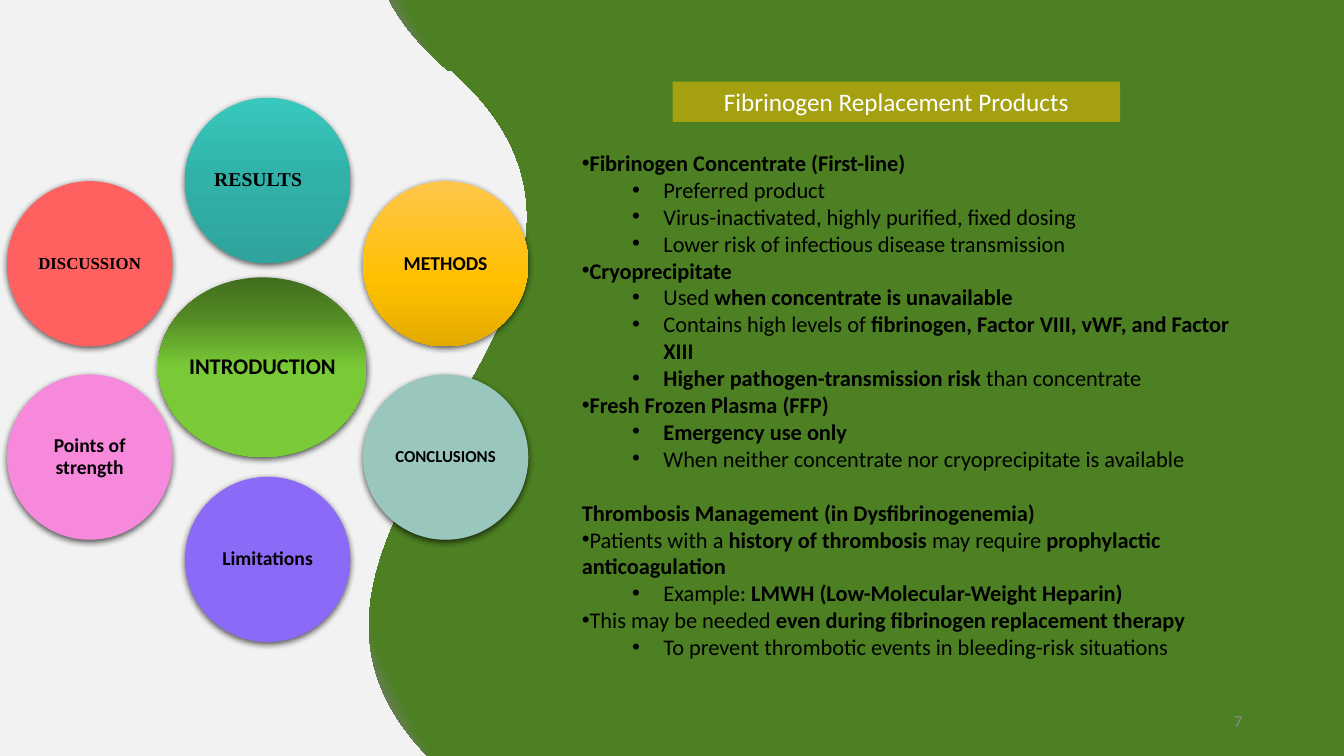
from dataclasses import dataclass

import pptx
import pptx.util
import pptx.dml.color
import pptx.enum.shapes
import pptx.enum.text
import pptx.oxml
import pptx.oxml.ns

Inches, Pt = pptx.util.Inches, pptx.util.Pt
RGBColor = pptx.dml.color.RGBColor
ALIGN = pptx.enum.text.PP_ALIGN
ANCHOR = pptx.enum.text.MSO_ANCHOR
SHAPES = pptx.enum.shapes.MSO_SHAPE

BLACK = RGBColor(0x00, 0x00, 0x00)
WHITE = RGBColor(0xFF, 0xFF, 0xFF)
PAPER = RGBColor(0xF2, 0xF2, 0xF2)
GREY = RGBColor(0x8C, 0x8C, 0x8C)
AMBER = RGBColor(0xFF, 0xC0, 0x00)
CORAL = RGBColor(0xFF, 0x60, 0x60)
SAGE = RGBColor(0x99, 0xC7, 0xBD)
VIOLET = RGBColor(0x8B, 0x6A, 0xF7)
PINK = RGBColor(0xF6, 0x89, 0xDC)
WAVE_STOPS = [(90, RGBColor(0x4C, 0x80, 0x22)), (94, RGBColor(0x7C, 0x7C, 0x7C)),
              (97, RGBColor(0x7B, 0xCB, 0x38)), (100, RGBColor(0x93, 0x93, 0x93))]
GOLD_STOPS = [(0, RGBColor(0xFF, 0xC6, 0x4B)), (60, AMBER),
              (100, RGBColor(0xE3, 0xAB, 0x00))]
TEAL_STOPS = [(0, RGBColor(0x38, 0xC8, 0xBE)), (50, RGBColor(0x31, 0xB1, 0xA8)),
              (100, RGBColor(0x2E, 0xA4, 0x9C))]
GREEN_STOPS = [(0, RGBColor(0x41, 0x6D, 0x1D)), (21, RGBColor(0x51, 0x88, 0x24)),
               (50, RGBColor(0x79, 0xCA, 0x36)), (100, RGBColor(0x7B, 0xCB, 0x39))]
LINEAR = '<a:lin ang="5400000" scaled="0"/>'
RADIAL = ('<a:path path="circle"><a:fillToRect l="50000" t="50000" '
          'r="50000" b="50000"/></a:path>')

SANS, SERIF = "Calibri", "Times New Roman"
# label, column, top as share of the free height, fill, font, size, alignment
PETALS = [
    ("DISCUSSION", 0, 0.22, CORAL, SERIF, 12, ALIGN.CENTER),
    ("METHODS", 2, 0.22, GOLD_STOPS, SANS, 14, ALIGN.CENTER),
    ("CONCLUSIONS", 2, 0.73, SAGE, SANS, 12, ALIGN.CENTER),
    ("Limitations", 1, 1, VIOLET, SANS, 14, ALIGN.CENTER),
    ("Points of strength", 0, 0.73, PINK, SANS, 14, ALIGN.CENTER),
    ("RESULTS", 1, 0, TEAL_STOPS, SERIF, 14, ALIGN.LEFT),
]
HEADING, POINT, DETAIL = "heading", "point", "detail"
# Every second piece of a text, split at "*", is bold
PRODUCT_NOTES = [
    (POINT, "*Fibrinogen Concentrate (First-line)*"),
    (DETAIL, "Preferred product"),
    (DETAIL, "Virus-inactivated, highly purified, fixed dosing"),
    (DETAIL, "Lower risk of infectious disease transmission"),
    (POINT, "*Cryoprecipitate*"),
    (DETAIL, "Used *when concentrate is unavailable*"),
    (DETAIL, "Contains high levels of *fibrinogen, Factor VIII, vWF, and Factor XIII*"),
    (DETAIL, "*Higher pathogen-transmission risk* than concentrate"),
    (POINT, "*Fresh Frozen Plasma (FFP)*"),
    (DETAIL, "*Emergency use only*"),
    (DETAIL, "When neither concentrate nor cryoprecipitate is available"),
    (HEADING, "*Thrombosis Management (in Dysfibrinogenemia)*"),
    (POINT, "Patients with a *history of thrombosis* may require *prophylactic anticoagulation*"),
    (DETAIL, "Example: *LMWH (Low-Molecular-Weight Heparin)*"),
    (POINT, "This may be needed *even during fibrinogen replacement therapy*"),
    (DETAIL, "To prevent thrombotic events in bleeding-risk situations"),
]


@dataclass
class Box:
    """Region of the slide, in inches."""
    left: float
    top: float
    width: float
    height: float

    def emu(self):
        return [Inches(n) for n in (self.left, self.top, self.width, self.height)]


def xml(tag, attributes="", inner=""):
    namespace = pptx.oxml.ns.nsdecls("a")
    return pptx.oxml.parse_xml(f"<a:{tag} {namespace} {attributes}>{inner}</a:{tag}>")


def paint(shape, fill, shading=LINEAR):
    """Fill with one colour or a list of gradient stops, without an outline."""
    shape.fill.solid()
    shape.line.fill.background()
    shape.shadow.inherit = False
    if isinstance(fill, RGBColor):
        shape.fill.fore_color.rgb = fill
        return
    stops = "".join(f'<a:gs pos="{share * 1000}"><a:srgbClr val="{colour}"/></a:gs>'
                    for share, colour in fill)
    properties = shape._element.spPr
    solid = properties.find(pptx.oxml.ns.qn("a:solidFill"))
    gradient = xml("gradFill", 'rotWithShape="1"', f"<a:gsLst>{stops}</a:gsLst>{shading}")
    properties.replace(solid, gradient)


def set_font(font, name, size, colour, bold=False):
    font.name, font.size, font.bold = name, Pt(size), bold
    font.color.rgb = colour


def draw_waves(slide, box):
    """Stack two sideways waves, the upper one overlapping the lower slightly."""
    for step in range(2):
        middle_x = box.left + box.width / 2
        middle_y = box.top + box.height / 2 - step * (box.height - 0.03)
        upright = Box(middle_x - box.height / 2, middle_y - box.width / 2,
                      box.height, box.width)
        wave = slide.shapes.add_shape(SHAPES.WAVE, *upright.emu())
        wave.adjustments[0], wave.adjustments[1] = 0.07, 0
        wave.rotation = 270
        paint(wave, WAVE_STOPS, RADIAL)


def draw_circle(slide, box, label, fill, font, size, alignment, wrap=True):
    circle = slide.shapes.add_shape(SHAPES.OVAL, *box.emu())
    paint(circle, fill)
    effects = circle._element.spPr.find(pptx.oxml.ns.qn("a:effectLst"))
    effects.append(xml("outerShdw",
                       'blurRad="57150" dist="19050" dir="5400000" rotWithShape="0"',
                       '<a:srgbClr val="000000"><a:alpha val="63000"/></a:srgbClr>'))
    frame = circle.text_frame
    frame.word_wrap = wrap
    frame.vertical_anchor = ANCHOR.MIDDLE
    frame.margin_left = frame.margin_right = Inches(0.05)
    frame.margin_top = frame.margin_bottom = Inches(0.05)
    paragraph = frame.paragraphs[0]
    paragraph.text, paragraph.alignment = label, alignment
    paragraph.line_spacing = 0.9
    set_font(paragraph.font, font, size, BLACK, True)


def draw_flower(slide, box):
    """Ring of section circles around the larger introduction circle."""
    diameter = 1.64
    column_step = (box.width - diameter) / 2
    for label, column, row, *style in PETALS:
        petal = Box(box.left + column * column_step,
                    box.top + row * (box.height - diameter), diameter, diameter)
        draw_circle(slide, petal, label, *style)
    hub = Box(box.left + 0.29 * box.width, box.top + 0.33 * box.height,
              0.4 * box.width, 0.33 * box.height)
    draw_circle(slide, hub, "INTRODUCTION", GREEN_STOPS, SANS, 16, ALIGN.CENTER, wrap=False)


def bring_forward(slide, placeholder, box):
    placeholder.left, placeholder.top, placeholder.width, placeholder.height = box.emu()
    slide.shapes._spTree.append(placeholder._element)
    placeholder.text_frame.auto_size = pptx.enum.text.MSO_AUTO_SIZE.NONE
    placeholder.text_frame.word_wrap = True


def write_title(slide, box):
    title = slide.shapes.title
    bring_forward(slide, title, box)
    title.fill.solid()
    title.fill.fore_color.rgb = AMBER
    colour = title._element.spPr.find(".//" + pptx.oxml.ns.qn("a:srgbClr"))
    colour.append(xml("alpha", 'val="50000"'))
    title.text_frame.vertical_anchor = ANCHOR.MIDDLE
    paragraph = title.text_frame.paragraphs[0]
    paragraph.text, paragraph.alignment = "Fibrinogen Replacement Products", ALIGN.CENTER
    set_font(paragraph.font, SANS, 18, WHITE)


def write_notes(slide, box):
    body = slide.placeholders[1]
    bring_forward(slide, body, box)
    frame = body.text_frame
    frame.vertical_anchor = ANCHOR.TOP
    for index, (kind, text) in enumerate(PRODUCT_NOTES):
        paragraph = frame.add_paragraph() if index else frame.paragraphs[0]
        paragraph.level = 1 if kind == DETAIL else 0
        paragraph.space_before = Pt(19.5 if kind == HEADING else 0)
        set_font(paragraph.font, SANS, 16, BLACK)
        for position, piece in enumerate(text.split("*")):
            if piece:
                run = paragraph.add_run()
                run.text, run.font.bold = piece, position % 2 == 1
        properties = paragraph._p.get_or_add_pPr()
        properties.set("marL", str(Inches(0.81 if kind == DETAIL else 0)))
        properties.set("indent", str(Inches(-0.31 if kind == DETAIL else 0)))
        bullet = ([xml("buNone")] if kind == HEADING else
                  [xml("buFont", 'typeface="Arial"'), xml("buChar", 'char="•"')])
        for element in bullet:
            properties.insert_element_before(element, "a:tabLst", "a:defRPr", "a:extLst")


def write_page_number(slide, box):
    frame = slide.shapes.add_textbox(*box.emu()).text_frame
    frame.word_wrap = True
    frame.vertical_anchor = ANCHOR.MIDDLE
    paragraph = frame.paragraphs[0]
    paragraph.text, paragraph.alignment = "7", ALIGN.RIGHT
    set_font(paragraph.font, SANS, 12, GREY)


def main():
    presentation = pptx.Presentation()
    presentation.slide_width, presentation.slide_height = Inches(13.33), Inches(7.5)
    slide = presentation.slides.add_slide(presentation.slide_layouts[1])
    slide.background.fill.solid()
    slide.background.fill.fore_color.rgb = PAPER
    draw_waves(slide, Box(3.63, 0.67, 11.64, 7.02))
    draw_flower(slide, Box(0.07, 0.97, 5.17, 5.4))
    write_page_number(slide, Box(9.42, 6.95, 3, 0.4))
    write_title(slide, Box(6.67, 0.81, 4.44, 0.4))
    write_notes(slide, Box(5.67, 1.43, 6.63, 5.82))
    presentation.save("out.pptx")


if __name__ == "__main__":
    main()
